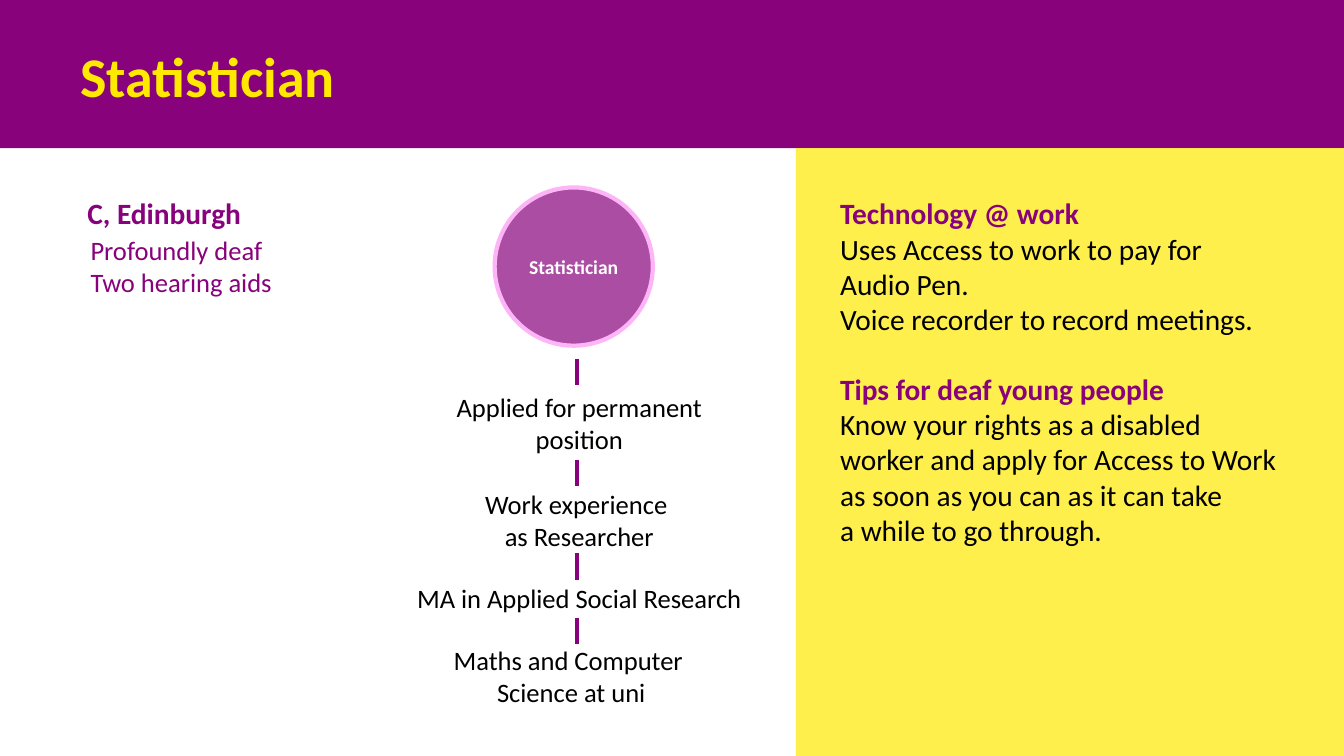
from dataclasses import dataclass

from lxml import etree
from pptx import Presentation
from pptx import util as u
from pptx.dml.color import RGBColor
from pptx.enum import shapes, text
from pptx.oxml.ns import qn


@dataclass(frozen=True)
class Theme:
    font: str = "Calibri"
    purple: str = "87027B"
    yellow: str = "FFE900"
    orchid: str = "AB4EA3"
    pink: str = "FEB5F7"
    white: str = "FFFFFF"
    black: str = "000000"
    title: int = 40
    heading: int = 21
    body: int = 19
    badge: int = 14
    line: int = 3


class Deck:
    def __init__(self, theme, width, height):
        self.theme = theme
        self.prs = Presentation()
        self.prs.slide_width, self.prs.slide_height = u.Inches(width), u.Inches(height)
        self.s = self.prs.slides.add_slide(self.prs.slide_layouts[6])

    def apply(self, target, values):
        for name, value in values.items():
            setattr(target, name, value)

    def fill_text(self, tf, paragraphs, align=text.PP_ALIGN.LEFT, **frame):
        self.apply(tf, {"word_wrap": True, **frame})
        for i, runs in enumerate(paragraphs):
            p = tf.paragraphs[0] if i == 0 else tf.add_paragraph()
            p.alignment = align
            for content, size, color, bold in runs:
                for j, line in enumerate(content.split("\n")):
                    if j:
                        p.add_line_break()
                    if line:
                        r = p.add_run()
                        r.text = line
                        self.apply(r.font, {"name": self.theme.font, "size": u.Pt(size), "bold": bold})
                        r.font.color.rgb = RGBColor.from_string(color)

    def shape(self, kind, box, fill, line=None, alpha=None):
        sp = self.s.shapes.add_shape(kind, *map(u.Inches, box))
        sp.shadow.inherit = False
        sp.fill.solid()
        sp.fill.fore_color.rgb = RGBColor.from_string(fill)
        if alpha:
            color = sp._element.spPr.find(qn("a:solidFill"))[0]
            etree.SubElement(color, qn("a:alpha")).set("val", str(alpha * 1000))
        if line:
            sp.line.color.rgb = RGBColor.from_string(line)
            sp.line.width = u.Pt(self.theme.line)
        else:
            sp.line.fill.background()
        return sp

    def textbox(self, box, paragraphs, **style):
        sp = self.s.shapes.add_textbox(*map(u.Inches, box))
        self.fill_text(sp.text_frame, paragraphs, **style)

    def tick(self, x, top, length=0.26):
        ends = map(u.Inches, (x, top, x, top + length))
        c = self.s.shapes.add_connector(shapes.MSO_CONNECTOR.STRAIGHT, *ends)
        c.line.color.rgb = RGBColor.from_string(self.theme.purple)
        c.line.width = u.Pt(self.theme.line)
        etree.SubElement(c._element.spPr, qn("a:effectLst"))


def main():
    t = Theme()
    deck = Deck(t, 13.34, 7.5)
    rect, oval = shapes.MSO_SHAPE.RECTANGLE, shapes.MSO_SHAPE.OVAL
    center, middle = text.PP_ALIGN.CENTER, text.MSO_ANCHOR.MIDDLE

    deck.shape(rect, (0, 0, 13.34, 1.47), t.purple)
    deck.textbox((0.67, 0.35, 9.03, 0.79), [[("Statistician", t.title, t.yellow, True)]],
                 vertical_anchor=middle, margin_left=u.Inches(0.13), margin_right=u.Inches(0.13),
                 margin_top=u.Inches(0.07), margin_bottom=u.Inches(0.07))

    deck.textbox((0.77, 1.89, 4.23, 0.45), [[("C, Edinburgh", t.heading, t.purple, True)]])
    deck.textbox((0.8, 2.27, 2.71, 0.74), [[(line, t.body, t.purple, False)]
                                           for line in ("Profoundly deaf", "Two hearing aids")])

    badge = deck.shape(oval, (4.91, 1.86, 1.57, 1.57), t.orchid, t.pink)
    deck.fill_text(badge.text_frame, [[("Statistician", t.badge, t.white, True)]], align=center,
                   vertical_anchor=middle, margin_left=0, margin_right=0, margin_top=0, margin_bottom=0)

    career = [
        (3.56, (4.43, 3.83, 2.64, 0.74), "Applied for permanent position"),
        (4.56, (4.43, 4.79, 2.64, 0.74), "Work experience \nas Researcher"),
        (5.49, (3.85, 5.72, 3.8, 0.42), "MA in Applied Social Research"),
        (6.13, (3.77, 6.34, 3.8, 0.74), "Maths and Computer \nScience at uni"),
    ]
    for tick_top, box, step in career:
        deck.tick(5.73, tick_top)
        deck.textbox(box, [[(step, t.body, t.black, False)]], align=center)

    deck.shape(rect, (7.9, 1.47, 5.44, 6.03), t.yellow, alpha=70)
    advice = [
        (1.89, 1.51, "Technology @ work",
         "Uses Access to work to pay for \nAudio Pen. \nVoice recorder to record meetings."),
        (3.63, 1.87, "Tips for deaf young people",
         "Know your rights as a disabled worker and apply for Access to Work "
         "as soon as you can as it can take \na while to go through."),
    ]
    for top, height, heading, body in advice:
        deck.textbox((8.24, top, 4.57, height), [[(heading + "\n", t.heading, t.purple, True),
                                                  (body, t.heading, t.black, False)]])

    deck.prs.save("out.pptx")


if __name__ == "__main__":
    main()
